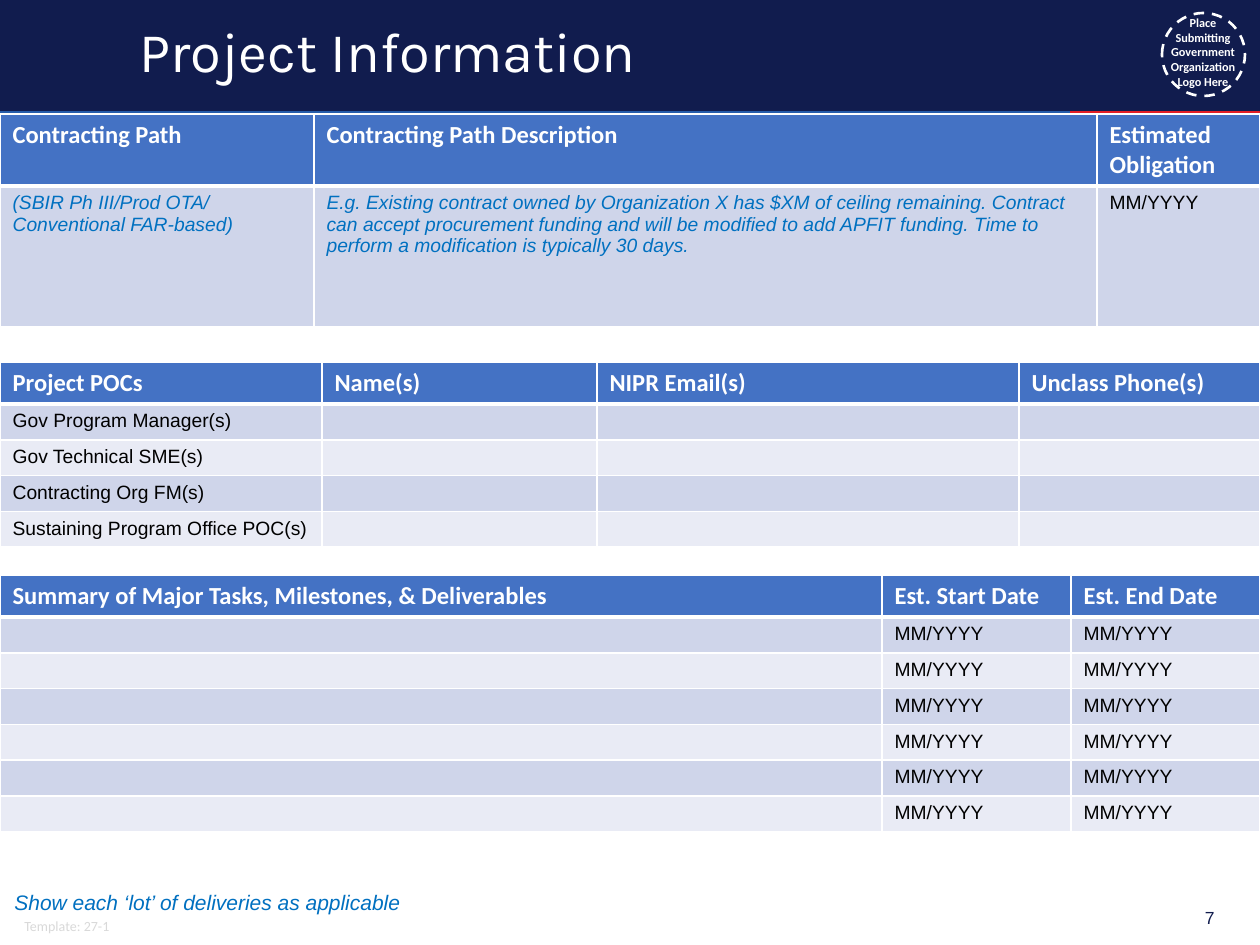
from lxml.etree import SubElement
from pptx import Presentation
from pptx.dml.color import RGBColor
from pptx.enum.dml import MSO_LINE
from pptx.enum.shapes import MSO_CONNECTOR, MSO_SHAPE
from pptx.enum.text import MSO_ANCHOR, PP_ALIGN
from pptx.oxml.ns import qn
from pptx.util import Emu, Pt

NAVY = RGBColor(0x11, 0x1C, 0x4E)
RULE_BLUE = RGBColor(0x26, 0x5C, 0xAA)
RULE_RED = RGBColor(0xE2, 0x1E, 0x26)
HEADER = RGBColor(0x44, 0x72, 0xC4)
BANDS = [RGBColor(0xE9, 0xEB, 0xF5), RGBColor(0xCF, 0xD5, 0xEA)]
HINT = RGBColor(0x00, 0x70, 0xC0)
PALE = RGBColor(0xD9, 0xD9, 0xD9)
WHITE = RGBColor(0xFF, 0xFF, 0xFF)
BLACK = RGBColor(0, 0, 0)
SCALE = 914400 / 126


def px(*values):
    return [Emu(round(v * SCALE)) for v in values]


def style(p, name, size, color, bold=False, italic=False):
    p.font.name, p.font.size = name, Pt(size)
    p.font.bold, p.font.italic = bold, italic
    p.font.color.rgb = color


prs = Presentation()
prs.slide_width, prs.slide_height = px(1260, 945)
s = prs.slides.add_slide(prs.slide_layouts[5])

band = s.shapes.add_shape(MSO_SHAPE.RECTANGLE, *px(0, 0, 1260, 112))
band.shadow.inherit = False
band.fill.solid()
band.fill.fore_color.rgb = NAVY
band.line.fill.background()

for start, end, color in [(0, 1070, RULE_BLUE), (1260, 1070, RULE_RED)]:
    rule = s.shapes.add_connector(MSO_CONNECTOR.STRAIGHT, *px(start, 112, end, 112))
    rule.line.color.rgb = color
    rule.line.width = Pt(1)
    SubElement(rule._element.spPr, qn("a:effectLst"))

ring = s.shapes.add_shape(MSO_SHAPE.OVAL, *px(1162, 13, 83, 83))
ring.shadow.inherit = False
ring.fill.background()
ring.line.color.rgb = WHITE
ring.line.width = Pt(1.5)
ring.line.dash_style = MSO_LINE.DASH

title = s.shapes.title
title.left, title.top, title.width, title.height = px(127, 8, 954, 93)
tf = title.text_frame
tf.text = "Project Information"
tf.vertical_anchor = MSO_ANCHOR.MIDDLE
p = tf.paragraphs[0]
p.alignment = PP_ALIGN.LEFT
p.line_spacing = 0.9
style(p, "Karla", 32, WHITE)
s.shapes._spTree.append(title._element)

texts = [
    ("Place Submitting Government Organization Logo Here", (1155, 9, 96, 87),
     PP_ALIGN.CENTER, MSO_ANCHOR.TOP, ("Calibri", 7, WHITE, True)),
    ("Template: 27-1", (12, 911, 124, 30),
     PP_ALIGN.LEFT, MSO_ANCHOR.TOP, ("Calibri", 8, PALE)),
    ("7", (1070, 893, 157, 50),
     PP_ALIGN.RIGHT, MSO_ANCHOR.MIDDLE, ("Arial", 10, NAVY)),
    ("Show each ‘lot’ of deliveries as applicable", (2, 883, 463, 38),
     PP_ALIGN.LEFT, MSO_ANCHOR.TOP, ("Arial", 12, HINT, False, True)),
]
for text, box, align, anchor, font in texts:
    tf = s.shapes.add_textbox(*px(*box)).text_frame
    tf.word_wrap = True
    tf.vertical_anchor = anchor
    tf.text = text
    p = tf.paragraphs[0]
    p.alignment = align
    style(p, *font)

contract = [
    ["Contracting Path", "Contracting Path Description", "Estimated Obligation"],
    ["(SBIR Ph III/Prod OTA/\nConventional FAR-based)",
     "E.g. Existing contract owned by Organization X has $XM of ceiling remaining. "
     "Contract can accept procurement funding and will be modified to add APFIT funding. "
     "Time to perform a modification is typically 30 days.",
     "MM/YYYY"],
]
roles = ["Gov Program Manager(s)", "Gov Technical SME(s)", "Contracting Org FM(s)",
         "Sustaining Program Office POC(s)"]
contacts = [["Project POCs", "Name(s)", "NIPR Email(s)", "Unclass Phone(s)"]]
contacts += [[role, "", "", ""] for role in roles]
tasks = [["Summary of Major Tasks, Milestones, & Deliverables", "Est. Start Date", "Est. End Date"]]
tasks += [["", "MM/YYYY", "MM/YYYY"]] * 6

tables = [
    (contract, 114, [314, 783, 163], 72, 141),
    (contacts, 362, [322, 275, 422, 241], 41, 34),
    (tasks, 575, [882, 189, 189], 41, 34),
]
for rows, top, widths, head_height, row_height in tables:
    heights = [head_height] + [row_height] * (len(rows) - 1)
    table = s.shapes.add_table(len(rows), len(widths), *px(0, top, 1260, sum(heights))).table
    for col, width in zip(table.columns, px(*widths)):
        col.width = width
    for i, (row, height) in enumerate(zip(table.rows, px(*heights))):
        row.height = height
        for j, cell in enumerate(row.cells):
            cell.text = rows[i][j]
            for p in cell.text_frame.paragraphs:
                if i == 0:
                    style(p, "Calibri", 14, WHITE, True)
                else:
                    hint = rows is contract and j < 2
                    style(p, "Arial", 11, HINT if hint else BLACK, False, hint)
            tcPr = cell._tc.get_or_add_tcPr()
            for side in ("lnL", "lnR", "lnT", "lnB"):
                thick = (side, i) in [("lnB", 0), ("lnT", 1)]
                ln = SubElement(tcPr, qn(f"a:{side}"), w=str(Pt(3 if thick else 1)))
                SubElement(SubElement(ln, qn("a:solidFill")), qn("a:srgbClr"), val=str(WHITE))
            cell.fill.solid()
            cell.fill.fore_color.rgb = HEADER if i == 0 else BANDS[i % 2]

prs.save("out.pptx")
